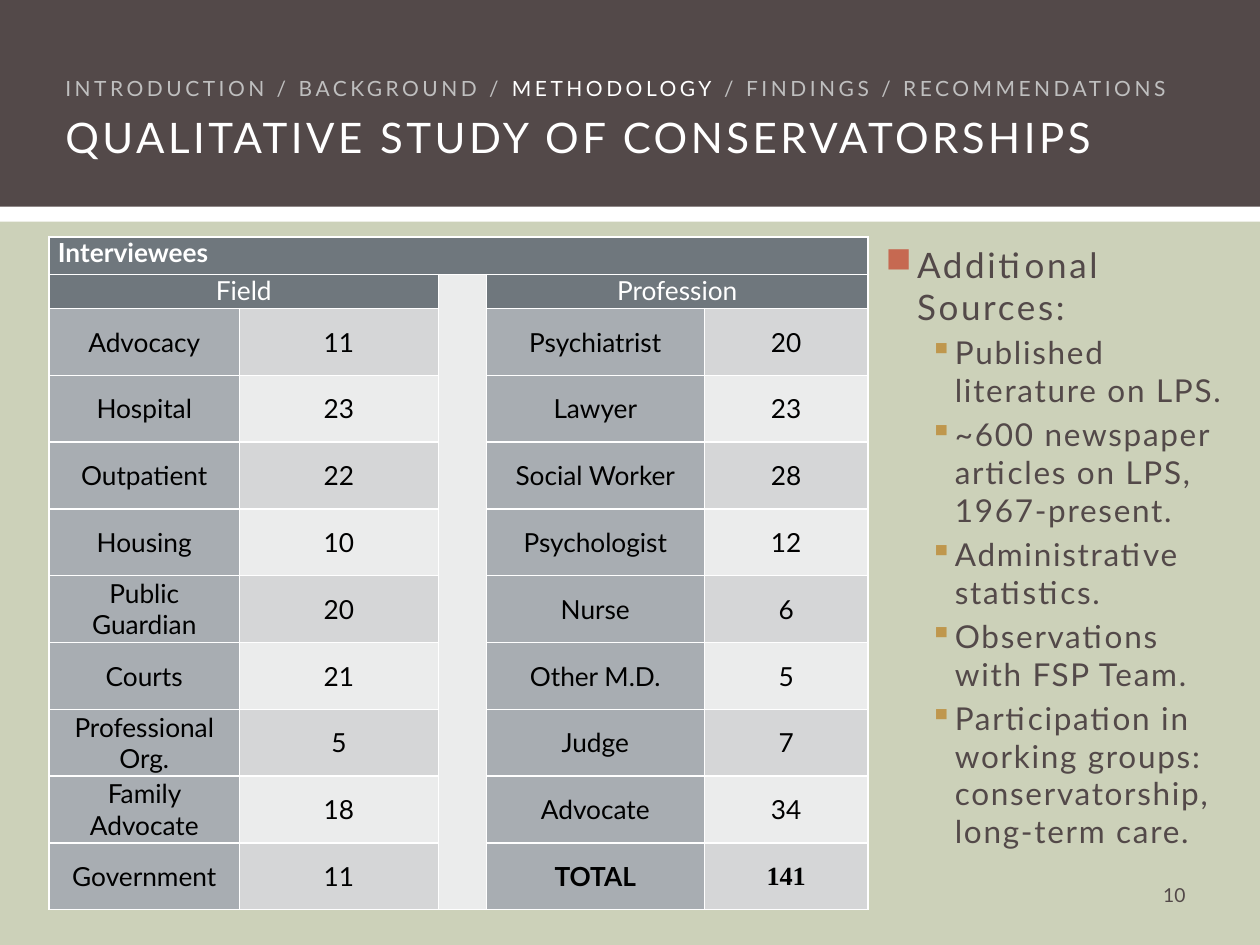
from lxml import etree
from pptx import Presentation, util as u
from pptx.dml.color import RGBColor
from pptx.enum import shapes, text
from pptx.oxml.ns import qn

COLORS = {
    "white": "FFFFFF", "black": "000000", "brown": "534949", "sage": "CCD1B9",
    "muted": "BFBFBF", "slate": "6F777D", "label": "A8ADB2", "band": "D5D6D7",
    "pale": "EBECEC", "coral": "C66951", "gold": "BF974D",
}


def write(paragraph, words, size=15, color="black", bold=False, font="Lato",
          spacing=0, align=None, before=0, after=0, bullet=None,
          bullet_color="gold", margin=0, indent=0):
    run = paragraph.add_run()
    run.text = words
    run.font.size = u.Pt(size)
    run.font.name = font
    run.font.bold = bold
    run.font.color.rgb = RGBColor.from_string(COLORS[color])
    if spacing:
        run._r.get_or_add_rPr().set("spc", str(int(spacing * 100)))
    paragraph.alignment = align
    paragraph.space_before = u.Pt(before)
    paragraph.space_after = u.Pt(after)
    if bullet:
        properties = paragraph._p.get_or_add_pPr()
        properties.set("marL", str(u.Inches(margin)))
        properties.set("indent", str(u.Inches(indent)))
        tint = etree.SubElement(properties, qn("a:buClr"))
        etree.SubElement(tint, qn("a:srgbClr"), val=COLORS[bullet_color])
        etree.SubElement(properties, qn("a:buChar"), char=bullet)


def style_cell(cell, color):
    properties = cell._tc.get_or_add_tcPr()
    for side in ("lnL", "lnR", "lnT", "lnB"):
        border = etree.SubElement(properties, qn(f"a:{side}"), w=str(u.Pt(1)))
        paint = etree.SubElement(border, qn("a:solidFill"))
        etree.SubElement(paint, qn("a:srgbClr"), val=COLORS["white"])
    cell.fill.solid()
    cell.fill.fore_color.rgb = RGBColor.from_string(COLORS[color])
    cell.margin_left = cell.margin_right = u.Inches(0.07)
    cell.margin_top = cell.margin_bottom = 0


deck = Presentation()
deck.slide_width, deck.slide_height = u.Inches(10), u.Inches(7.5)
slide = deck.slides.add_slide(deck.slide_layouts[6])

for top, height, color in ((1.76, 5.74, "sage"), (0, 1.64, "brown")):
    panel = slide.shapes.add_shape(shapes.MSO_SHAPE.RECTANGLE, 0, u.Inches(top),
                                   u.Inches(10), u.Inches(height))
    panel.shadow.inherit = False
    panel.fill.solid()
    panel.fill.fore_color.rgb = RGBColor.from_string(COLORS[color])
    panel.line.fill.background()

fields = [("Advocacy", 11), ("Hospital", 23), ("Outpatient", 22), ("Housing", 10),
          ("Public Guardian", 20), ("Courts", 21), ("Professional Org.", 5),
          ("Family Advocate", 18), ("Government", 11)]
professions = [("Psychiatrist", 20), ("Lawyer", 23), ("Social Worker", 28),
               ("Psychologist", 12), ("Nurse", 6), ("Other M.D.", 5),
               ("Judge", 7), ("Advocate", 34), ("TOTAL", 141)]
column_widths = [1.51, 1.58, 0.38, 1.73, 1.3]
row_heights = [0.3, 0.27] + [0.53] * len(fields)

interviewees = slide.shapes.add_table(
    len(row_heights), len(column_widths), u.Inches(0.39), u.Inches(1.88),
    u.Inches(sum(column_widths)), u.Inches(sum(row_heights))).table
interviewees.first_row = interviewees.horz_banding = False
for column, width in zip(interviewees.columns, column_widths):
    column.width = u.Inches(width)
for row, height in zip(interviewees.rows, row_heights):
    row.height = u.Inches(height)

for row in range(len(row_heights)):
    for column in range(len(column_widths)):
        if row == 0 or (row == 1 and column != 2):
            color = "slate"
        elif column == 2:
            color = "pale"
        elif column in (0, 3):
            color = "label"
        else:
            color = "pale" if row % 2 else "band"
        style_cell(interviewees.cell(row, column), color)

for start, end in (((0, 0), (0, 4)), ((1, 0), (1, 1)),
                   ((1, 3), (1, 4)), ((1, 2), (10, 2))):
    interviewees.cell(*start).merge(interviewees.cell(*end))

write(interviewees.cell(0, 0).text_frame.paragraphs[0], "Interviewees",
      color="white", bold=True)
for first, heading, entries in ((0, "Field", fields), (3, "Profession", professions)):
    write(interviewees.cell(1, first).text_frame.paragraphs[0], heading,
          color="white", align=text.PP_ALIGN.CENTER)
    for row, entry in enumerate(entries, 2):
        for column, value in enumerate(entry, first):
            cell = interviewees.cell(row, column)
            cell.vertical_anchor = text.MSO_ANCHOR.MIDDLE
            write(cell.text_frame.paragraphs[0], str(value),
                  bold=entry[0] == "TOTAL", align=text.PP_ALIGN.CENTER,
                  font="Times New Roman" if value == 141 else "Lato")

frames = []
for left, top, width, height in ((9.03, 6.95, 0.58, 0.3), (6.88, 1.88, 2.99, 5.48),
                                 (0.42, 0.55, 9.58, 1.17)):
    frame = slide.shapes.add_textbox(u.Inches(left), u.Inches(top), u.Inches(width),
                                     u.Inches(height)).text_frame
    frame.word_wrap = True
    frames.append(frame)
page_number, sources, header = frames

page_number.vertical_anchor = text.MSO_ANCHOR.MIDDLE
write(page_number.paragraphs[0], "10", size=11, color="brown",
      align=text.PP_ALIGN.CENTER)

write(sources.paragraphs[0], "Additional Sources:", size=20, color="brown",
      spacing=1.5, before=4, bullet="■", bullet_color="coral",
      margin=0.3, indent=-0.25)
for source in ("Published literature on LPS.",
               "~600 newspaper articles on LPS, 1967-present.",
               "Administrative statistics.",
               "Observations with FSP Team.",
               "Participation in working groups: conservatorship, long-term care."):
    item = sources.add_paragraph()
    item.level = 1
    write(item, source, size=18, color="brown", spacing=1, before=3.6,
          bullet="▪", margin=0.6, indent=-0.2)

for section, color in (("INTRODUCTION / BACKGROUND / ", "muted"),
                       ("METHODOLOGY", "white"),
                       (" / FINDINGS / RECOMMENDATIONS", "muted")):
    write(header.paragraphs[0], section, size=12, color=color, spacing=2, after=6)
write(header.add_paragraph(), "QUALITATIVE STUDY OF CONSERVATORSHIPS", size=24,
      color="white", spacing=2, after=6)

deck.save("out.pptx")
